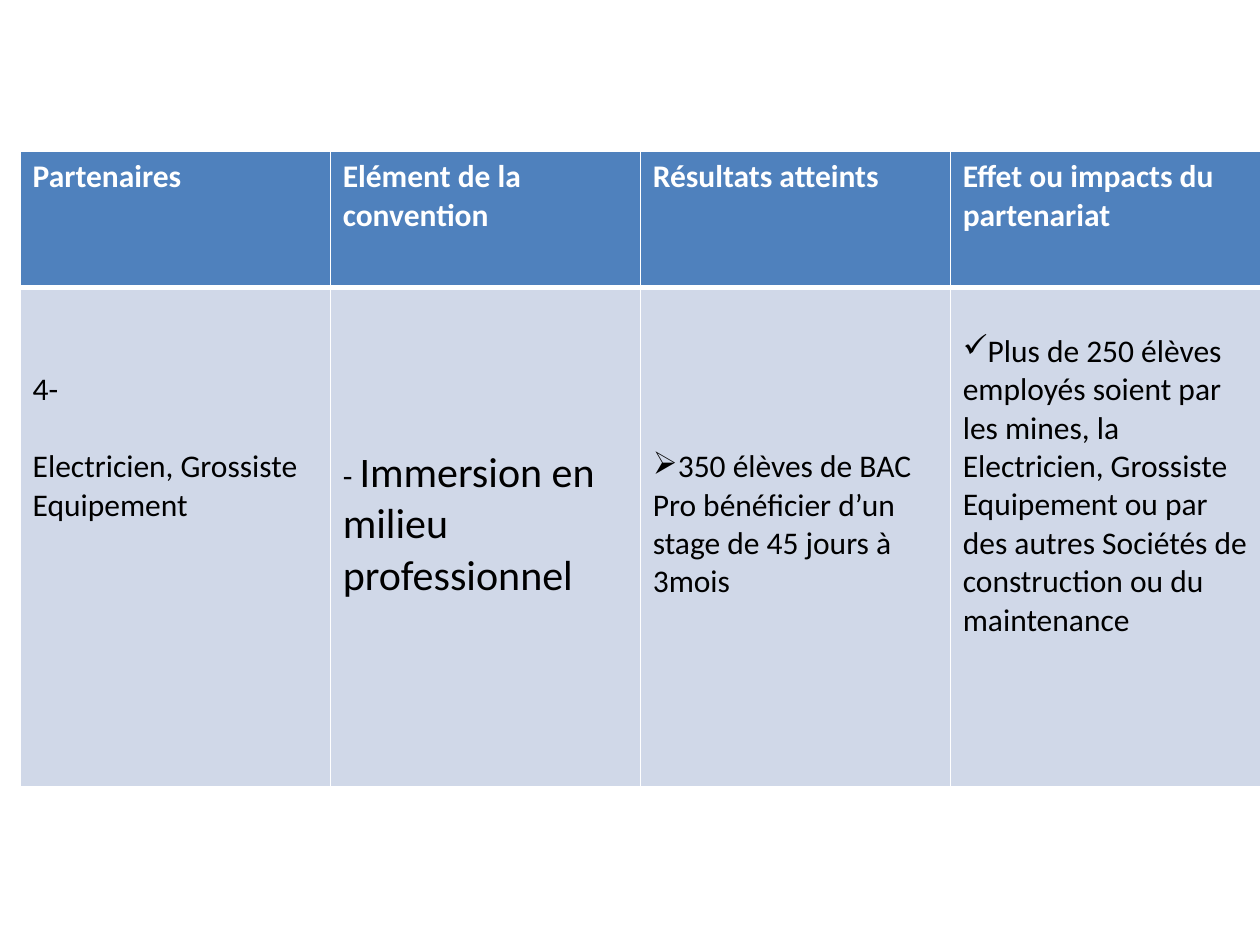
import pptx
import pptx.dml.color
import pptx.oxml.ns
import pptx.util
from lxml import etree

Cm, Pt = pptx.util.Cm, pptx.util.Pt

COLORS = {"header": "4F81BD", "body": "D0D8E8", "rule": "FFFFFF",
          "header_text": "FFFFFF", "body_text": "000000"}
FONT = "Calibri"
BODY_SIZE = 18
LINE = 22  # height in points of one line of body text

HEADINGS = ["Partenaires", "Elément de la convention", "Résultats atteints",
            "Effet ou impacts du partenariat"]
# lead: lines left free above the text; each paragraph is a list of (text, size)
PARTNERSHIP = [
    {"lead": 2, "paragraphs": [[("4-", 18)], [("Electricien, Grossiste Equipement", 18)]]},
    {"lead": 4, "paragraphs": [[("- ", 18), ("Immersion en milieu professionnel", 24)]]},
    {"lead": 4, "bullet": "➢", "paragraphs": [
        [("350 élèves de BAC Pro bénéficier d’un stage de 45 jours à 3mois", 18)]]},
    {"lead": 1, "bullet": "✓", "paragraphs": [
        [("Plus de 250 élèves employés soient par les mines, la Electricien, Grossiste "
          "Equipement ou par des autres Sociétés de construction ou du maintenance", 18)]]},
]
HEADER_ROW = [{"lead": 0, "paragraphs": [[(heading, BODY_SIZE)]]} for heading in HEADINGS]

LEFT, TOP, COLUMN_WIDTH = Cm(0.41), Cm(3.05), Cm(6.25)
ROW_HEIGHTS = [Cm(2.74), Cm(10.06)]


def rgb(name):
    """Return a named colour."""
    return pptx.dml.color.RGBColor.from_string(COLORS[name])


def add_child(parent, tag, **attributes):
    """Append a DrawingML element."""
    return etree.SubElement(parent, pptx.oxml.ns.qn("a:" + tag), attributes)


def rule_cell(cell, top, bottom):
    """Draw the white rules round a cell, widths in points."""
    properties = cell._tc.get_or_add_tcPr()
    for side, width in (("L", 1), ("R", 1), ("T", top), ("B", bottom)):
        rule = add_child(properties, "ln" + side, w=str(Pt(width)))
        add_child(add_child(rule, "solidFill"), "srgbClr", val=COLORS["rule"])


def fill_cell(cell, entry, part):
    """Write one table entry in the style of its row."""
    cell.fill.solid()
    cell.fill.fore_color.rgb = rgb(part)
    cell.margin_left = cell.margin_right = Cm(0.25)
    cell.margin_top = Cm(0.13) + Pt(LINE * entry["lead"])
    cell.margin_bottom = Cm(0.13)
    for index, runs in enumerate(entry["paragraphs"]):
        frame = cell.text_frame
        paragraph = frame.add_paragraph() if index else frame.paragraphs[0]
        if index:
            paragraph.space_before = Pt(LINE)
        if "bullet" in entry:
            properties = paragraph._p.get_or_add_pPr()
            properties.set("marL", "0")
            properties.set("indent", "0")
            add_child(properties, "buChar", char=entry["bullet"])
        for text, size in runs:
            run = paragraph.add_run()
            run.text = text
            run.font.name = FONT
            run.font.size = Pt(size)
            run.font.bold = part == "header"
            run.font.color.rgb = rgb(part + "_text")


def main():
    """Build the slide with the partnership table."""
    deck = pptx.Presentation()
    deck.slide_width, deck.slide_height = Cm(25.4), Cm(19.05)
    slide = deck.slides.add_slide(deck.slide_layouts[6])
    partners = slide.shapes.add_table(
        2, len(HEADINGS), LEFT, TOP, COLUMN_WIDTH * len(HEADINGS), sum(ROW_HEIGHTS)).table
    partners.horz_banding = False
    for column in partners.columns:
        column.width = COLUMN_WIDTH
    rows = [("header", HEADER_ROW, 1, 3), ("body", PARTNERSHIP, 3, 1)]
    for r, (part, entries, top, bottom) in enumerate(rows):
        partners.rows[r].height = ROW_HEIGHTS[r]
        for c, entry in enumerate(entries):
            rule_cell(partners.cell(r, c), top, bottom)
            fill_cell(partners.cell(r, c), entry, part)
    deck.save("out.pptx")


main()
